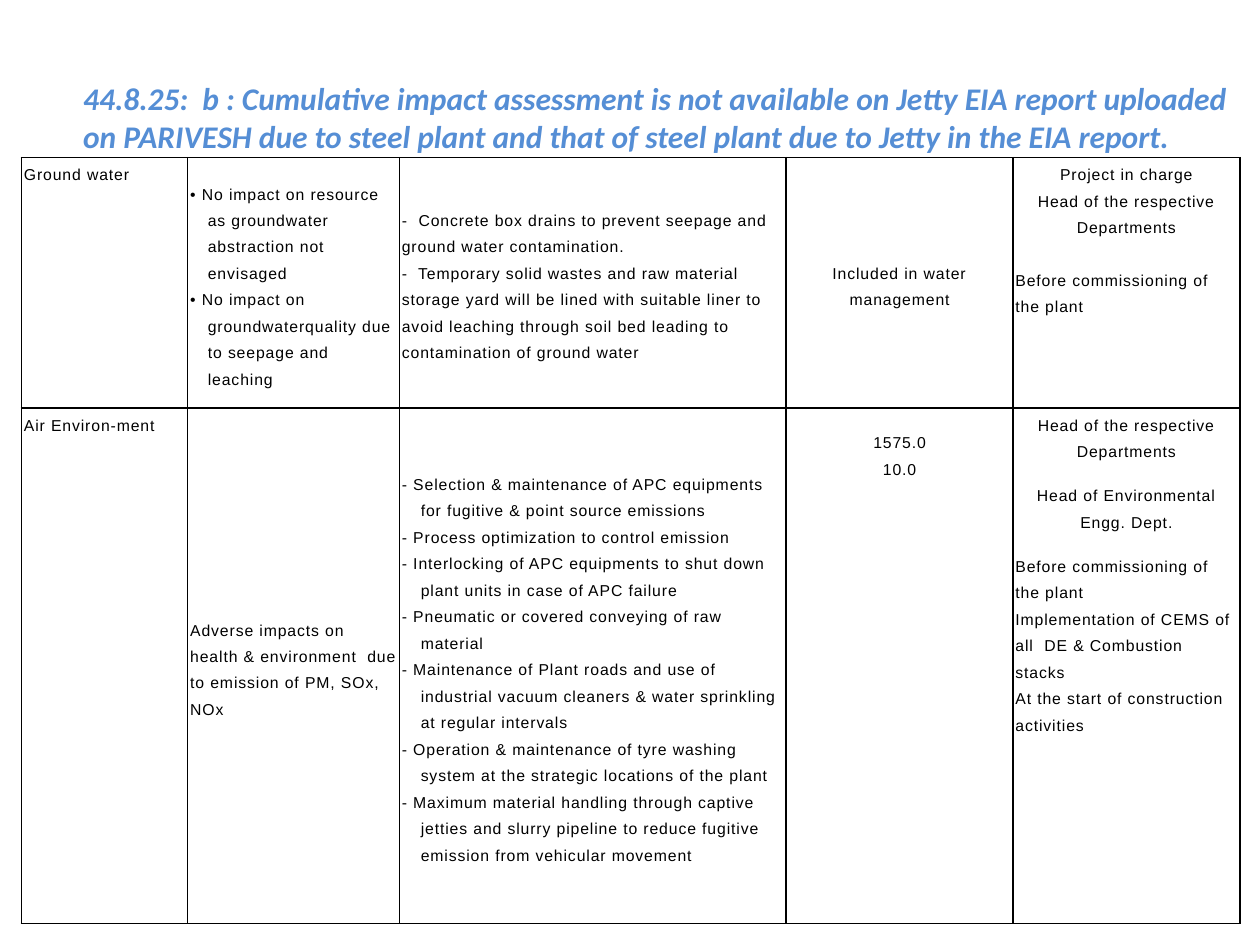
"""Build the environmental impact assessment slide with its management table."""
from dataclasses import dataclass

import pptx
import pptx.dml.color
import pptx.enum.text
import pptx.oxml
import pptx.oxml.ns
import pptx.util
from pptx.util import Inches

RGB = pptx.dml.color.RGBColor.from_string
ALIGN = pptx.enum.text.PP_ALIGN
ANCHOR = pptx.enum.text.MSO_ANCHOR


@dataclass(frozen=True)
class Theme:
    title_color: str = "558ED5"
    text_color: str = "000000"
    border_color: str = "000000"
    title_font: str = "Calibri"
    body_font: str = "Arial"
    title_size: int = 18
    body_size: int = 9
    border_width: int = 1


@dataclass(frozen=True)
class Para:
    text: str
    center: bool = False
    before: int = 0
    after: int = 0
    hang: float = 0


@dataclass(frozen=True)
class Cell:
    paras: list
    middle: bool = False
    top: float = 0


theme = Theme()


def style_run(r, font, size, color):
    r.font.name = font
    r.font.size = pptx.util.Pt(size)
    r.font.color.rgb = RGB(color)


def add_borders(cell):
    tc_pr = cell._tc.get_or_add_tcPr()
    for side in ("lnL", "lnR", "lnT", "lnB"):
        tc_pr.append(pptx.oxml.parse_xml(
            f'<a:{side} {pptx.oxml.ns.nsdecls("a")} w="{pptx.util.Pt(theme.border_width)}">'
            f'<a:solidFill><a:srgbClr val="{theme.border_color}"/></a:solidFill></a:{side}>'))


TITLE = ("44.8.25:  b : Cumulative impact assessment is not available on Jetty EIA report "
         "uploaded on PARIVESH due to steel plant and that of steel plant due to Jetty "
         "in the EIA report.")
GROUND_IMPACTS = [
    "• No impact on resource as groundwater abstraction not envisaged",
    "• No impact on groundwaterquality due to seepage and leaching",
]
GROUND_MEASURES = [
    "-  Concrete box drains to prevent seepage and ground water contamination.",
    "-  Temporary solid wastes and raw material storage yard will be lined with suitable "
    "liner to avoid leaching through soil bed leading to contamination of ground water",
]
AIR_MEASURES = [
    "- Selection & maintenance of APC equipments for fugitive & point source emissions",
    "- Process optimization to control emission",
    "- Interlocking of APC equipments to shut down plant units in case of APC failure",
    "- Pneumatic or covered conveying of raw material",
    "- Maintenance of Plant roads and use of industrial vacuum cleaners & water sprinkling "
    "at regular intervals",
    "- Operation & maintenance of tyre washing system at the strategic locations of the plant",
    "- Maximum material handling through captive jetties and slurry pipeline to reduce "
    "fugitive emission from vehicular movement",
]
ROWS = [
    [
        Cell([Para("Ground water")]),
        Cell([Para(t, hang=0.14) for t in GROUND_IMPACTS], middle=True),
        Cell([Para(t) for t in GROUND_MEASURES], middle=True),
        Cell([Para("Included in water management", center=True)], middle=True),
        Cell([
            Para("Project in charge", center=True),
            Para("Head of the respective Departments", center=True),
            Para("Before commissioning of the plant", before=15),
        ]),
    ],
    [
        Cell([Para("Air Environ-ment")]),
        Cell([Para("Adverse impacts on health & environment  due to emission of PM, SOx, NOx")],
             middle=True),
        Cell([Para(t, hang=0.15) for t in AIR_MEASURES], middle=True),
        Cell([Para("1575.0", center=True), Para("10.0", center=True)], top=0.14),
        Cell([
            Para("Head of the respective Departments", center=True, after=10),
            Para("Head of Environmental Engg. Dept.", center=True, after=10),
            Para("Before commissioning of the plant"),
            Para("Implementation of CEMS of all  DE & Combustion stacks"),
            Para("At the start of construction activities"),
        ]),
    ],
]
COL_WIDTHS = [1.32, 1.68, 3.07, 1.8, 1.8]
ROW_HEIGHTS = [1.99, 4.09]

prs = pptx.Presentation()
prs.slide_width, prs.slide_height = Inches(10), Inches(7.5)
s = prs.slides.add_slide(prs.slide_layouts[5])

sp = s.shapes.title
sp.left, sp.top, sp.width, sp.height = Inches(0.56), Inches(0.58), Inches(9.42), Inches(0.71)
tf = sp.text_frame
tf.text = TITLE
tf.word_wrap = True
tf.auto_size = pptx.enum.text.MSO_AUTO_SIZE.NONE
tf.vertical_anchor = ANCHOR.TOP
p = tf.paragraphs[0]
p.alignment = ALIGN.LEFT
r = p.runs[0]
style_run(r, theme.title_font, theme.title_size, theme.title_color)
r.font.bold = r.font.italic = True

table = s.shapes.add_table(len(ROWS), len(COL_WIDTHS), Inches(0.17), Inches(1.25),
                           Inches(sum(COL_WIDTHS)), Inches(sum(ROW_HEIGHTS))).table
table.first_row = table.horz_banding = False
for column, width in zip(table.columns, COL_WIDTHS):
    column.width = Inches(width)
for row, height in zip(table.rows, ROW_HEIGHTS):
    row.height = Inches(height)

for i, row in enumerate(ROWS):
    for j, content in enumerate(row):
        cell = table.cell(i, j)
        cell.margin_left = cell.margin_right = Inches(0.02)
        cell.margin_top, cell.margin_bottom = Inches(content.top), 0
        cell.vertical_anchor = ANCHOR.MIDDLE if content.middle else ANCHOR.TOP
        add_borders(cell)
        cell.fill.background()
        tf = cell.text_frame
        tf.text = "\n".join(para.text for para in content.paras)
        for p, para in zip(tf.paragraphs, content.paras):
            p.alignment = ALIGN.CENTER if para.center else ALIGN.LEFT
            p.line_spacing = 1.5
            p.space_before = pptx.util.Pt(para.before)
            p.space_after = pptx.util.Pt(para.after)
            if para.hang:
                p_pr = p._p.get_or_add_pPr()
                p_pr.set("marL", str(Inches(para.hang)))
                p_pr.set("indent", str(-Inches(para.hang)))
            for r in p.runs:
                style_run(r, theme.body_font, theme.body_size, theme.text_color)
                r._r.get_or_add_rPr().set("spc", "50")

prs.save("out.pptx")
